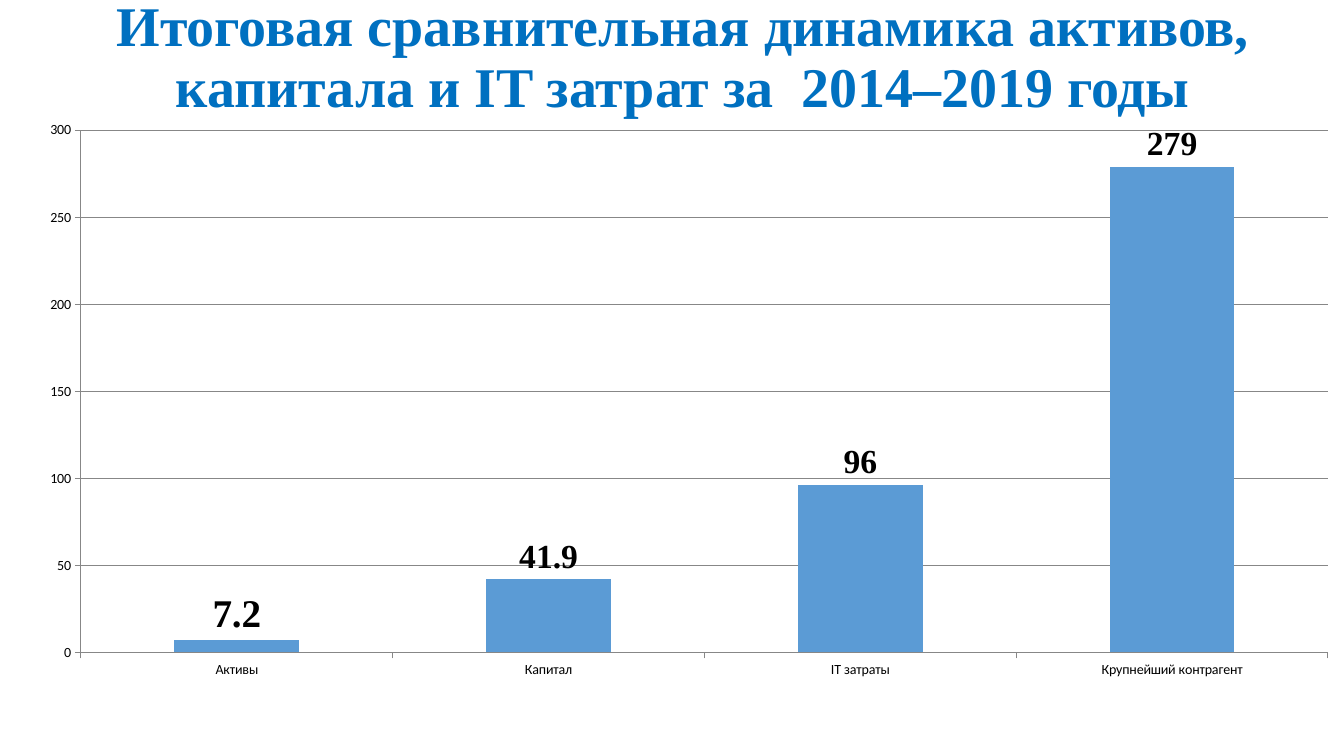
import lxml.etree
import pptx
import pptx.chart.data
import pptx.dml.color
import pptx.enum.chart
import pptx.enum.text
import pptx.oxml
import pptx.oxml.ns
import pptx.util
from pptx.util import Cm, Pt

TITLE = "Итоговая сравнительная динамика активов, капитала и IT затрат за  2014–2019 годы"
GROWTH = {"Активы": 7.2, "Капитал": 41.9, "IT затраты": 96, "Крупнейший контрагент": 279}
PLOT = {"x": 0.045, "y": 0.039, "w": 0.955, "h": 0.912}
THEME = {
    "title_font": "Times New Roman", "axis_font": "Calibri",
    "title": "0070C0", "bar": "5B9BD5", "line": "878787", "text": "000000",
    "title_size": 40, "axis_size": 10, "label_size": 24, "first_label_size": 28,
}


def colour(name):
    return pptx.dml.color.RGBColor.from_string(THEME[name])


def style(font, face, size, ink, bold=False):
    font.name = THEME[face]
    font.size = Pt(THEME[size])
    font.color.rgb = colour(ink)
    font.bold = bold


def draw_line(line):
    line.color.rgb = colour("line")
    line.width = Pt(0.75)


def add_title(page):
    box = page.shapes.add_textbox(Cm(0.56), Cm(0.25), Cm(33.3), Cm(2.46))
    frame = box.text_frame
    frame.word_wrap = True
    frame.vertical_anchor = pptx.enum.text.MSO_ANCHOR.MIDDLE
    para = frame.paragraphs[0]
    para.alignment = pptx.enum.text.PP_ALIGN.CENTER
    para.line_spacing = 0.9
    span = para.add_run()
    span.text = TITLE
    style(span.font, "title_font", "title_size", "title", True)


def place_plot(chart):
    plot_area = chart.element.chart.plotArea
    for old in plot_area.findall(pptx.oxml.ns.qn("c:layout")):
        plot_area.remove(old)
    rules = [("layoutTarget", "inner"), ("xMode", "edge"), ("yMode", "edge"), *PLOT.items()]
    entries = "".join(f'<c:{tag} val="{value}"/>' for tag, value in rules)
    layout = pptx.oxml.parse_xml(
        f'<c:layout {pptx.oxml.ns.nsdecls("c")}><c:manualLayout>{entries}</c:manualLayout></c:layout>')
    plot_area.insert(0, layout)


def add_growth_chart(page):
    data = pptx.chart.data.CategoryChartData()
    data.categories = list(GROWTH)
    data.add_series("Series 1", list(GROWTH.values()))
    chart = page.shapes.add_chart(
        pptx.enum.chart.XL_CHART_TYPE.COLUMN_CLUSTERED,
        Cm(0.56), Cm(2.72), Cm(32.92), Cm(14.43), data).chart
    chart.has_legend = False
    chart.has_title = False
    style(chart.font, "axis_font", "axis_size", "text")
    place_plot(chart)

    for axis in (chart.category_axis, chart.value_axis):
        axis.major_tick_mark = pptx.enum.chart.XL_TICK_MARK.OUTSIDE
        axis.minor_tick_mark = pptx.enum.chart.XL_TICK_MARK.NONE
        draw_line(axis.format.line)
    scale = chart.value_axis
    scale.minimum_scale, scale.maximum_scale, scale.major_unit = 0, 300, 50
    scale.has_major_gridlines = True
    draw_line(scale.major_gridlines.format.line)

    plot = chart.plots[0]
    plot.gap_width = 150
    plot.vary_by_categories = False
    series = plot.series[0]
    series.format.fill.solid()
    series.format.fill.fore_color.rgb = colour("bar")

    outside = pptx.enum.chart.XL_LABEL_POSITION.OUTSIDE_END
    labels = series.data_labels
    labels.show_value = True
    labels.position = outside
    style(labels.font, "title_font", "label_size", "text", True)
    first = series.points[0].data_label
    style(first.font, "title_font", "first_label_size", "text", True)
    first.position = outside


def main():
    deck = pptx.Presentation()
    deck.slide_width, deck.slide_height = Cm(33.87), Cm(19.05)
    page = deck.slides.add_slide(deck.slide_layouts[6])
    add_title(page)
    add_growth_chart(page)
    deck.save("out.pptx")


if __name__ == "__main__":
    main()
